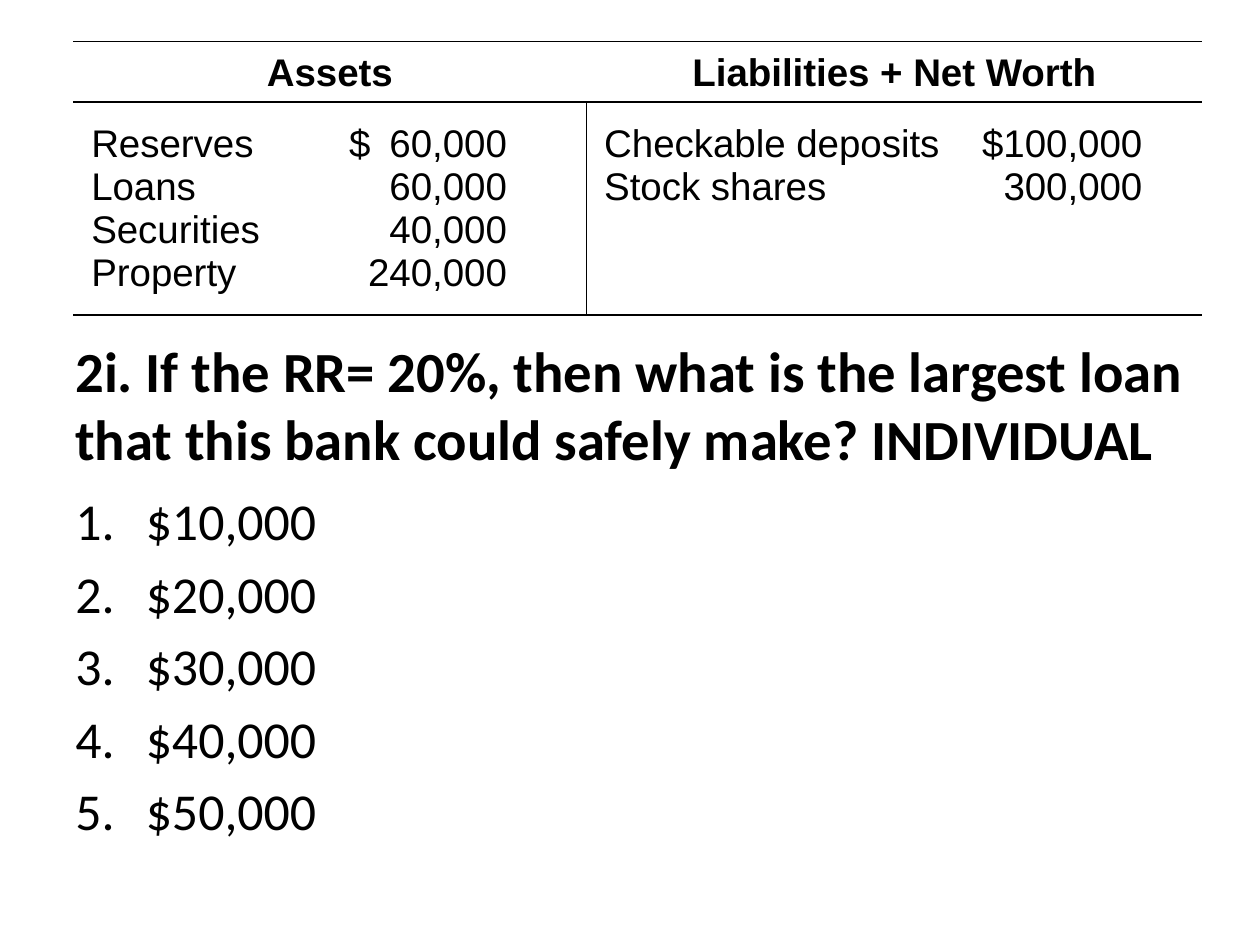
from lxml.etree import SubElement
from pptx import Presentation
from pptx.dml.color import RGBColor
from pptx.enum.text import MSO_ANCHOR, PP_ALIGN
from pptx.oxml.ns import qn
from pptx.util import Cm, Pt

COLORS = {"text": "000000", "rule": "000000"}
LINE_SIDES = {"left": "a:lnL", "right": "a:lnR", "top": "a:lnT", "bottom": "a:lnB"}

QUESTION = ("2i. If the RR= 20%, then what is the largest loan "
            "that this bank could safely make? INDIVIDUAL")
ANSWERS = ["$10,000", "$20,000", "$30,000", "$40,000", "$50,000"]

HEADINGS = ["Assets", "Liabilities + Net Worth"]
ASSETS = ["Reserves\t$\t60,000", "Loans\t60,000", "Securities\t40,000", "Property\t240,000"]
LIABILITIES = ["Checkable deposits\t$100,000", "Stock shares\t300,000"]
DOLLAR_TAB = Cm(5.2)
AMOUNT_TABS = [Cm(8.38), Cm(10.85)]


def style_font(paragraph, name, size, bold=False):
    font = paragraph.font
    font.name, font.size, font.bold = name, Pt(size), bold
    font.color.rgb = RGBColor.from_string(COLORS["text"])


def add_text(slide, left, top, width, height, lines, size, bold=False):
    shape = slide.shapes.add_textbox(left, top, width, height)
    frame = shape.text_frame
    frame.word_wrap = True
    frame.margin_right = 0
    frame.text = "\n".join(lines)
    for paragraph in frame.paragraphs:
        style_font(paragraph, "Calibri", size, bold)
    return frame


def number_paragraph(paragraph, indent):
    properties = paragraph._p.get_or_add_pPr()
    properties.set("marL", str(indent))
    properties.set("indent", str(-indent))
    bullet = SubElement(properties, qn("a:buAutoNum"), type="arabicPeriod")
    properties.find(qn("a:defRPr")).addprevious(bullet)


def add_tab_stops(paragraph, stops):
    properties = paragraph._p.get_or_add_pPr()
    tab_list = SubElement(properties, qn("a:tabLst"))
    for position, alignment in stops:
        SubElement(tab_list, qn("a:tab"), pos=str(position), algn=alignment)
    properties.find(qn("a:defRPr")).addprevious(tab_list)


def set_borders(cell, visible):
    properties = cell._tc.get_or_add_tcPr()
    for side, tag in LINE_SIDES.items():
        line = SubElement(properties, qn(tag), w=str(Pt(1)))
        if side in visible:
            fill = SubElement(line, qn("a:solidFill"))
            SubElement(fill, qn("a:srgbClr"), val=COLORS["rule"])
        else:
            SubElement(line, qn("a:noFill"))


def fill_cell(cell, lines, margins, borders, bold=False):
    cell.margin_left, cell.margin_top, cell.margin_right, cell.margin_bottom = margins
    cell.text = "\n".join(lines)
    for paragraph in cell.text_frame.paragraphs:
        style_font(paragraph, "Arial", 22, bold)
    set_borders(cell, borders)
    cell.fill.background()


def add_balance_sheet(slide):
    frame = slide.shapes.add_table(2, 2, Cm(1.48), Cm(0.84), Cm(22.76), Cm(5.51))
    table = frame.table
    table.first_row = table.horz_banding = False
    table.columns[0].width, table.columns[1].width = Cm(10.34), Cm(12.42)
    table.rows[0].height, table.rows[1].height = Cm(1.22), Cm(4.29)

    # Headings
    for column, heading in enumerate(HEADINGS):
        cell = table.cell(0, column)
        fill_cell(cell, [heading], (0, Cm(0.2), 0, Cm(0.08)), {"top", "bottom"}, bold=True)
        cell.text_frame.paragraphs[0].alignment = PP_ALIGN.CENTER

    # Entries, with amounts on a right tab and a divider between the sides
    for column, (entries, divider) in enumerate([(ASSETS, "right"), (LIABILITIES, "left")]):
        cell = table.cell(1, column)
        fill_cell(cell, entries, (Cm(0.36), Cm(0.41), 0, Cm(0.15)), {"top", "bottom", divider})
        for entry, paragraph in zip(entries, cell.text_frame.paragraphs):
            stops = [(AMOUNT_TABS[column], "r")]
            if entry.count("\t") == 2:
                stops.insert(0, (DOLLAR_TAB, "l"))
            add_tab_stops(paragraph, stops)


def main():
    presentation = Presentation()
    presentation.slide_width, presentation.slide_height = Cm(25.4), Cm(19.05)
    slide = presentation.slides.add_slide(presentation.slide_layouts[6])

    # Question
    question = add_text(slide, Cm(1.27), Cm(6.78), Cm(22.86), Cm(2.74), [QUESTION], 32.4, bold=True)
    question.vertical_anchor = MSO_ANCHOR.MIDDLE

    # Numbered answers
    answers = add_text(slide, Cm(1.27), Cm(9.73), Cm(11), Cm(7.42), ANSWERS, 29.6)
    for paragraph in answers.paragraphs:
        paragraph.space_before = Pt(5.9)
        number_paragraph(paragraph, Cm(1.42))

    # Bank's balance sheet
    add_balance_sheet(slide)

    presentation.save("out.pptx")


if __name__ == "__main__":
    main()
